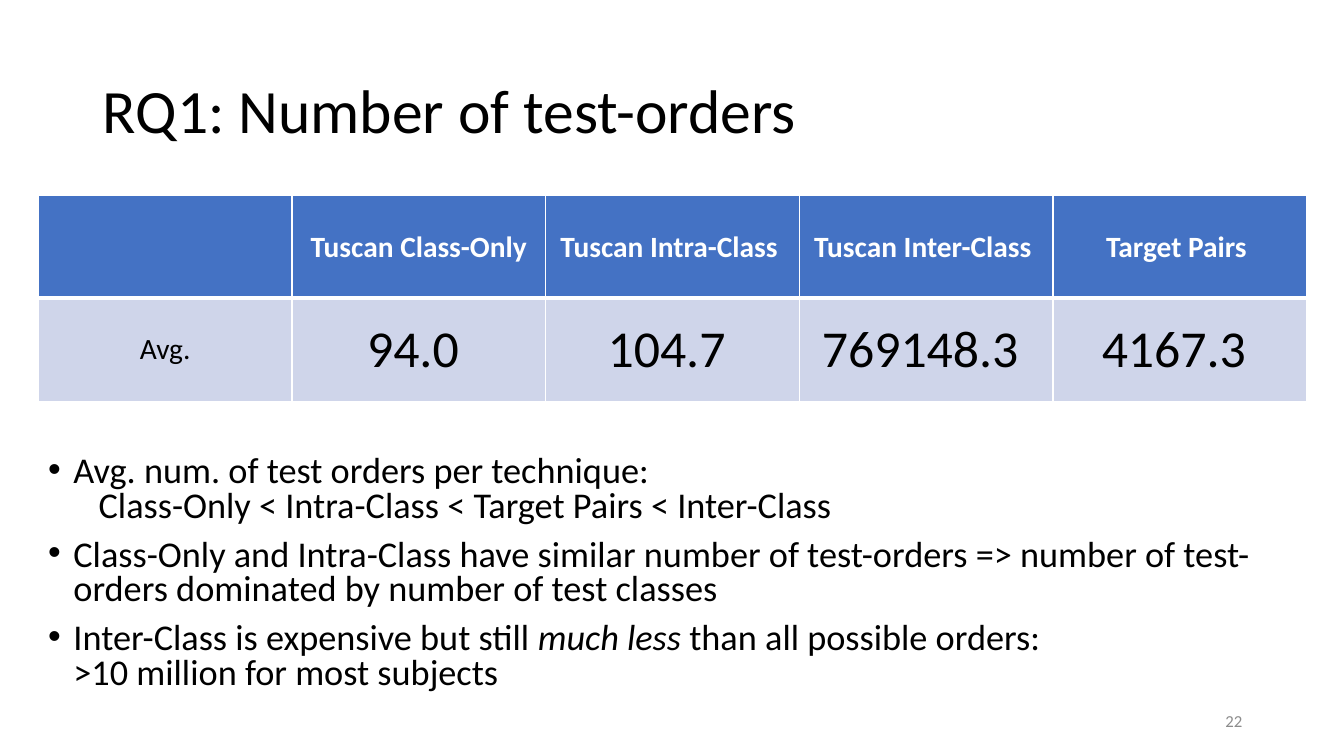
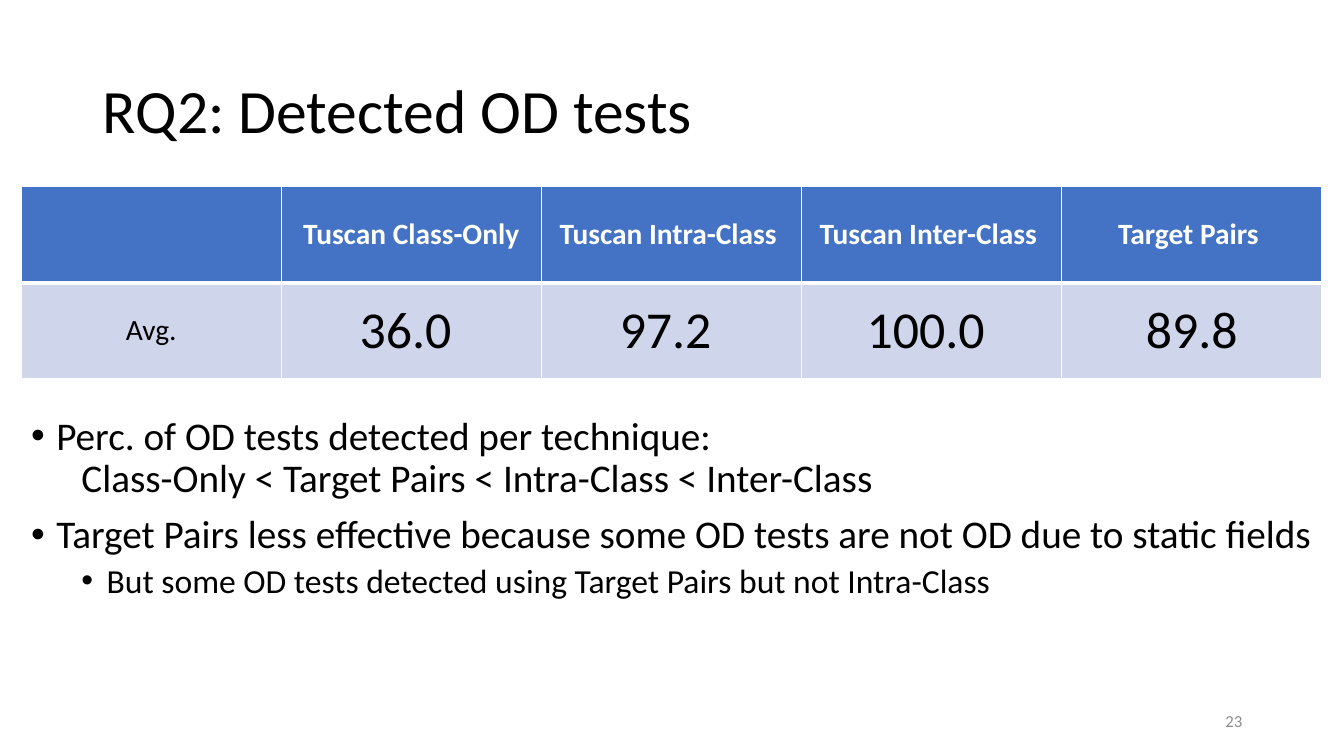
from itertools import product

from pptx import Presentation
from pptx.dml.color import RGBColor
from pptx.enum.text import MSO_ANCHOR, PP_ALIGN
from pptx.oxml import parse_xml
from pptx.oxml.ns import nsdecls
from pptx.util import Emu, Pt

COLORS = {"text": "000000", "white": "FFFFFF", "header": "4472C4",
          "row": "CFD5EA", "number": "8C8C8C"}
FONT = "Calibri"
TECHNIQUES = ["", "Tuscan Class-Only", "Tuscan Intra-Class ",
              "Tuscan Inter-Class ", "Target Pairs "]


def px(n):
    """Turn px, 100 to the inch, into EMU."""
    return Emu(n * 9144)


class Deck:
    """Holds the shared style and the current slide."""

    def __init__(self):
        self.prs = Presentation()
        self.prs.slide_width, self.prs.slide_height = px(1333), px(750)
        self.s = None

    def font(self, p, size, color="text", bold=False):
        """Set the font of a paragraph."""
        f = p.font
        f.name, f.size, f.bold = FONT, Pt(size), bold
        f.color.rgb = RGBColor.from_string(COLORS[color])

    def slide(self, title):
        """Start a slide with a formatted title."""
        self.s = self.prs.slides.add_slide(self.prs.slide_layouts[5])
        sp = self.s.shapes.title
        sp.left, sp.top, sp.width, sp.height = map(px, (92, 40, 1150, 145))
        tf = sp.text_frame
        tf.text, tf.vertical_anchor = title, MSO_ANCHOR.MIDDLE
        p = tf.paragraphs[0]
        p.alignment, p.line_spacing = PP_ALIGN.LEFT, 0.9
        self.font(p, 44)

    def textbox(self, box):
        """Add a wrapping text box and return its text frame."""
        tf = self.s.shapes.add_textbox(*map(px, box)).text_frame
        tf.word_wrap = True
        return tf

    def bullets(self, box, items, sizes, spacing):
        """Add (level, text) bullets; asterisks enclose italics."""
        tf = self.textbox(box)
        for i, (level, text) in enumerate(items):
            p = tf.add_paragraph() if i else tf.paragraphs[0]
            p.level, p.line_spacing = level, spacing
            p.space_before = Pt(5 if level else 10)
            self.font(p, sizes[level])
            pPr = p._p.get_or_add_pPr()
            pPr.set("marL", str(px(25 + 50 * level)))
            pPr.set("indent", str(px(-25)))
            bullet = [f'<a:buFont {nsdecls("a")} typeface="Arial"/>',
                      f'<a:buChar {nsdecls("a")} char="•"/>']
            at = pPr.index(pPr.find("{*}defRPr"))
            pPr[at:at] = [parse_xml(xml) for xml in bullet]
            for j, part in enumerate(text.split("*")):
                for k, line in enumerate(part.split("\n")):
                    if k:
                        p.add_line_break()
                    r = p.add_run()
                    r.text = line
                    if j % 2:
                        r.font.italic = True

    def borders(self, cell, bottom):
        """Draw white borders round a cell, the bottom one in points."""
        tcPr = cell._tc.get_or_add_tcPr()
        for side, width in zip("LRTB", (1, 1, 1, bottom)):
            tcPr.append(parse_xml(
                f'<a:ln{side} {nsdecls("a")} w="{Pt(width)}"><a:solidFill>'
                f'<a:srgbClr val="{COLORS["white"]}"/></a:solidFill></a:ln{side}>'))

    def table(self, box, values):
        """Add the table of averages per technique."""
        rows = [TECHNIQUES, ["Avg."] + values]
        table = self.s.shapes.add_table(2, len(TECHNIQUES), *map(px, box)).table
        for row, col in product(range(2), range(len(TECHNIQUES))):
            cell, head = table.cell(row, col), row == 0
            self.borders(cell, 3 if head else 1)
            cell.fill.solid()
            cell.fill.fore_color.rgb = RGBColor.from_string(
                COLORS["header" if head else "row"])
            cell.vertical_anchor = MSO_ANCHOR.MIDDLE
            cell.text = rows[row][col]
            p = cell.text_frame.paragraphs[0]
            p.alignment = PP_ALIGN.CENTER
            self.font(p, 21 if head or col == 0 else 37,
                      "white" if head else "text", head)

    def number(self, n):
        """Add the slide number."""
        tf = self.textbox((942, 695, 300, 40))
        tf.vertical_anchor = MSO_ANCHOR.MIDDLE
        p = tf.paragraphs[0]
        p.text, p.alignment = str(n), PP_ALIGN.RIGHT
        self.font(p, 12, "number")


def main():
    """Build both slides and save them."""
    d = Deck()
    d.slide("RQ1: Number of test-orders")
    d.bullets((38, 447, 1220, 269), [
        (0, "Avg. num. of test orders per technique:\n"
            "\tClass-Only < Intra-Class < Target Pairs < Inter-Class"),
        (0, "Class-Only and Intra-Class have similar number of test-orders => "
            "number of test-orders dominated by number of test classes"),
        (0, "Inter-Class is expensive but still *much less* than all possible "
            "orders:\n>10 million for most subjects"),
    ], (25.9,), 0.8)
    d.table((38, 194, 1258, 204), ["94.0 ", "104.7 ", "769148.3 ", "4167.3 "])
    d.number(22)

    d.slide("RQ2: Detected OD tests")
    d.bullets((21, 408, 1312, 314), [
        (0, "Perc. of OD tests detected per technique:\n"
            "\tClass-Only < Target Pairs < Intra-Class < Inter-Class"),
        (0, "Target Pairs less effective because some OD tests are not OD "
            "due to static fields"),
        (1, "But some OD tests detected using Target Pairs but not Intra-Class"),
    ], (28, 24), 0.9)
    d.table((21, 185, 1290, 191), ["36.0 ", "97.2 ", "100.0 ", "89.8"])
    d.number(23)
    d.prs.save("out.pptx")


if __name__ == "__main__":
    main()
